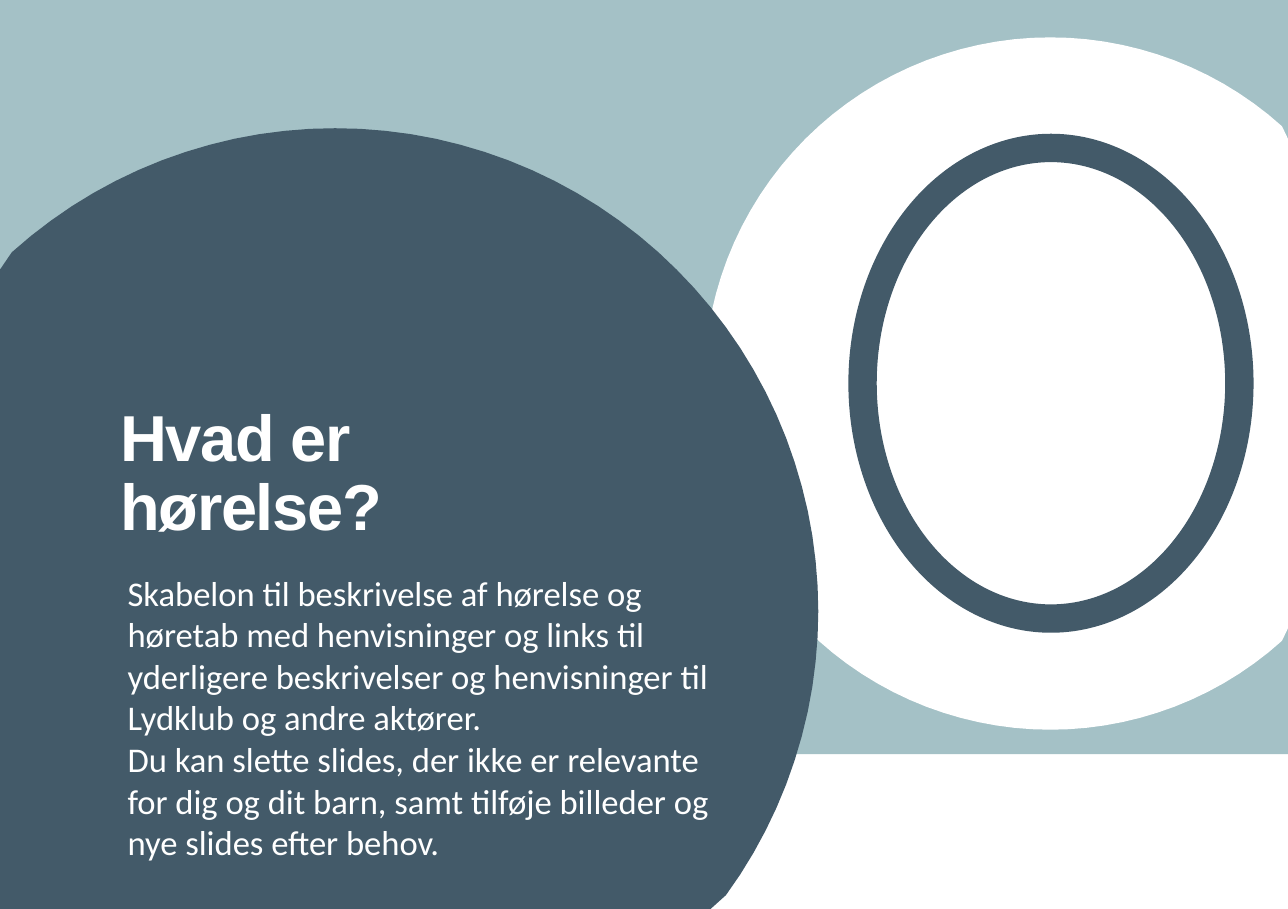
import math
from collections import namedtuple

import pptx
import pptx.dml.color
import pptx.enum.shapes
import pptx.enum.text
import pptx.util

Cm = pptx.util.Cm
Pt = pptx.util.Pt
RGBColor = pptx.dml.color.RGBColor
MSO_SHAPE = pptx.enum.shapes.MSO_SHAPE

TEAL = RGBColor(0xA4, 0xC1, 0xC6)
SLATE = RGBColor(0x43, 0x5A, 0x69)
WHITE = RGBColor(0xFF, 0xFF, 0xFF)

# All lengths are in centimetres
Box = namedtuple("Box", "left top width height")
PAGE = Box(0, 0, 20.98, 14.81)
CIRCLE_STEPS = 120

TITLE_FORMAT = {"name": "Arial", "size": Pt(30), "bold": True}
BODY_FORMAT = {"name": "Calibri", "size": Pt(16)}

TITLE = ["Hvad er hørelse?"]
BODY = [
    "Skabelon til beskrivelse af hørelse og høretab med henvisninger og links "
    "til yderligere beskrivelser og henvisninger til Lydklub og andre aktører.",
    "Du kan slette slides, der ikke er relevante for dig og dit barn, samt "
    "tilføje billeder og nye slides efter behov.",
]


def paint(shape, colour):
    shape.shadow.inherit = False
    shape.fill.solid()
    shape.fill.fore_color.rgb = colour
    shape.line.fill.background()


def add_plain(page, kind, box, colour):
    shape = page.shapes.add_shape(kind, *(Cm(length) for length in box))
    paint(shape, colour)
    return shape


def add_cut_circle(page, box, centre_x, centre_y, radius, colour):
    """Draw a circle around a centre in the box, cut off at the box edges."""
    points = []
    for step in range(CIRCLE_STEPS):
        angle = 2 * math.pi * step / CIRCLE_STEPS
        x = min(max(centre_x + radius * math.cos(angle), 0), box.width)
        y = min(max(centre_y + radius * math.sin(angle), 0), box.height)
        points.append((Cm(box.left + x), Cm(box.top + y)))
    builder = page.shapes.build_freeform(*points[0])
    builder.add_line_segments(points[1:], close=True)
    paint(builder.convert_to_shape(), colour)


def add_text(page, box, texts, formats, margin=None, line_spacing=None, tracking=None):
    frame = page.shapes.add_textbox(*(Cm(length) for length in box)).text_frame
    frame.word_wrap = True
    frame.auto_size = pptx.enum.text.MSO_AUTO_SIZE.SHAPE_TO_FIT_TEXT
    if margin is not None:
        for side in ("left", "top", "right", "bottom"):
            setattr(frame, f"margin_{side}", margin)
    for index, text in enumerate(texts):
        para = frame.add_paragraph() if index else frame.paragraphs[0]
        if line_spacing:
            para.line_spacing = line_spacing
        span = para.add_run()
        span.text = text
        for name, value in formats.items():
            setattr(span.font, name, value)
        span.font.color.rgb = WHITE
        if tracking:
            span.font._element.set("spc", str(tracking))


def add_backdrop(page, box):
    # Teal band with the white and slate circles
    add_plain(page, MSO_SHAPE.RECTANGLE, box._replace(height=12.29), TEAL)
    add_cut_circle(page, box, 17.11, 6.25, 5.64, WHITE)
    add_cut_circle(page, box, 5.46, 9.96, 7.87, SLATE)


def add_emblem(page, box):
    # Plain ring inside the white circle
    ring = add_plain(page, MSO_SHAPE.DONUT, box, SLATE)
    ring.adjustments[0] = 0.07


def add_message(page, box):
    # Heading and introduction
    heading = Box(box.left + 0.13, box.top, 6.78, 2.29)
    intro = Box(box.left, box.top + 2.59, box.width, 5.06)
    add_text(page, heading, TITLE, TITLE_FORMAT, margin=0,
             line_spacing=Pt(32), tracking=-60)
    add_text(page, intro, BODY, BODY_FORMAT)


def main():
    deck = pptx.Presentation()
    deck.slide_width, deck.slide_height = Cm(PAGE.width), Cm(PAGE.height)
    page = deck.slides.add_slide(deck.slide_layouts[6])
    add_backdrop(page, PAGE)
    add_emblem(page, Box(13.82, 2.18, 6.6, 8.13))
    add_message(page, Box(1.83, 6.6, 10.49, 7.65))
    deck.save("out.pptx")


if __name__ == "__main__":
    main()
